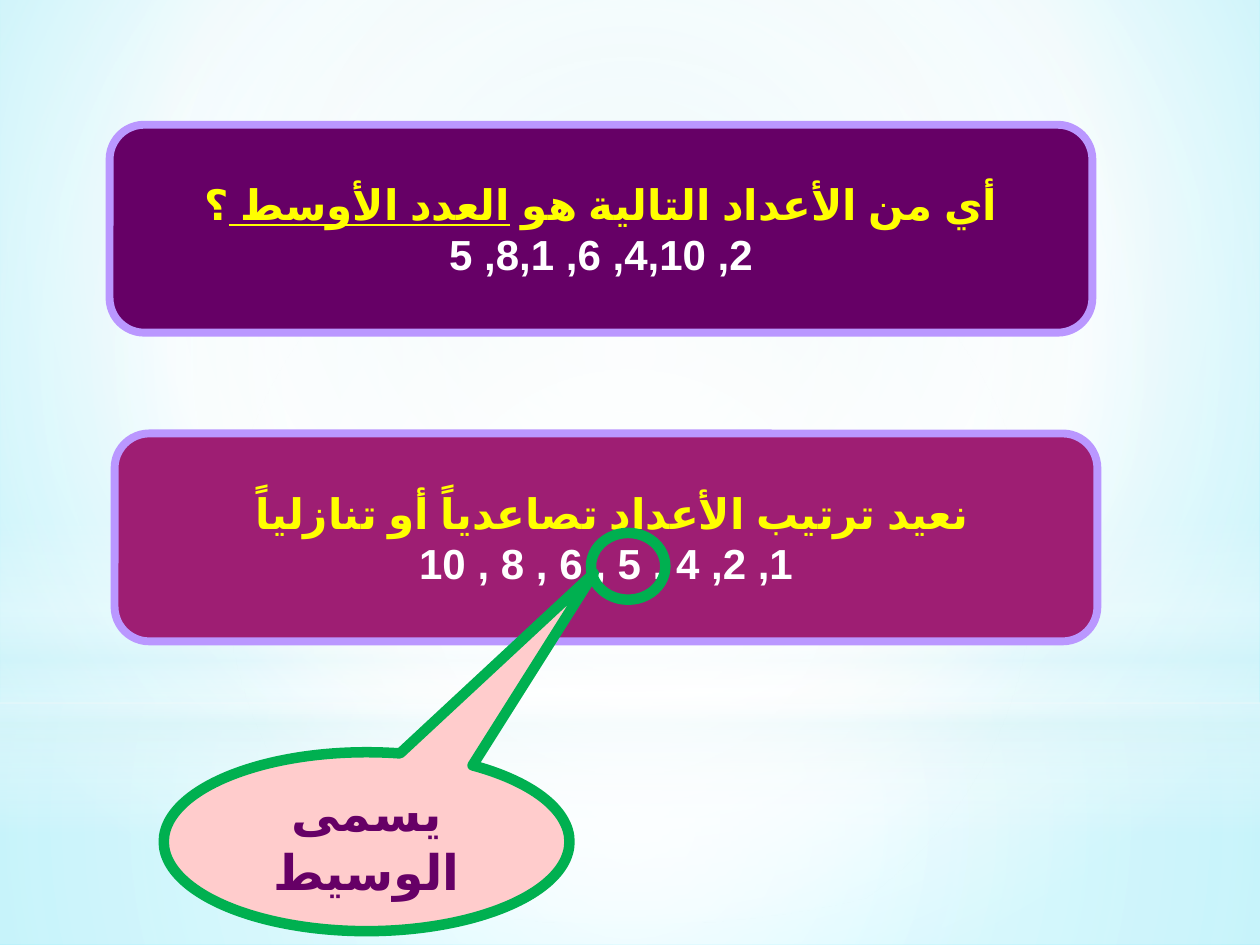
from lxml.etree import SubElement
from pptx import Presentation
from pptx.dml.color import RGBColor
from pptx.enum.shapes import MSO_SHAPE as Preset
from pptx.enum.text import MSO_ANCHOR as Anchor, PP_ALIGN as Align
from pptx.oxml.ns import qn
from pptx.util import Inches, Pt

COLORS = {
    "white": "FFFFFF", "ice": "DBF5F9", "sky": "CAF0F6", "cyan": "79EDFF",
    "purple": "660066", "magenta": "9E1E73", "lilac": "BA97FF",
    "yellow": "FFFF00", "green": "00B050", "pink": "FFCCCC",
}
LATIN_FONT, ARABIC_FONT = "Karla", "Arial"
CENTER = (50, 50, 50, 50)
GLOWS = [
    (Preset.RECTANGLE, (0, 5.58, 10, 1.92),
     [(0, "white", 91), (37, "white", 76), (100, "ice", 79)], CENTER),
    (Preset.RECTANGLE, (0, 0, 10, 5.58),
     [(0, "white", 89), (48, "white", 62), (100, "ice", 79)], CENTER),
    (Preset.RECTANGLE, (0, 4.12, 10, 2.5),
     [(0, "white", 0), (29, "white", 30), (45, "ice", 40),
      (55, "white", 26), (65, "ice", 60), (100, "white", 0)], None),
    (Preset.OVAL, (0, 1.75, 10, 5.58),
     [(0, "white", 100), (56, "white", 0)], CENTER),
]


def rgb(name):
    """Return the named palette colour."""
    return RGBColor.from_string(COLORS[name])


def set_gradient(fill, owner, stops, focus):
    """Give the owner a gradient: circular around focus, or vertical without one."""
    fill.gradient()
    gradient = owner.find(".//" + qn("a:gradFill"))
    gradient.clear()
    stop_list = SubElement(gradient, qn("a:gsLst"))
    for position, name, opacity in stops:
        stop = SubElement(stop_list, qn("a:gs"), {"pos": str(position * 1000)})
        color = SubElement(stop, qn("a:srgbClr"), {"val": COLORS[name]})
        if opacity < 100:
            SubElement(color, qn("a:alpha"), {"val": str(opacity * 1000)})
    if focus:
        circle = SubElement(gradient, qn("a:path"), {"path": "circle"})
        edges = {side: str(share * 1000) for side, share in zip("ltrb", focus)}
        SubElement(circle, qn("a:fillToRect"), edges)
    else:
        SubElement(gradient, qn("a:lin"), {"ang": "5400000", "scaled": "0"})


def add_outline(slide, preset, box, fill=None, line=None, width=0):
    """Add a preset shape in the box with flat fill and line."""
    outline = slide.shapes.add_shape(preset, *map(Inches, box))
    outline.shadow.inherit = False
    if fill:
        outline.fill.solid()
        outline.fill.fore_color.rgb = rgb(fill)
    else:
        outline.fill.background()
    if line:
        outline.line.color.rgb = rgb(line)
        outline.line.width = Pt(width)
    else:
        outline.line.fill.background()
    return outline


def write_lines(outline, lines, size):
    """Write centred right-to-left lines of (text, colour, underline) runs."""
    frame = outline.text_frame
    for name, value in {"word_wrap": True, "vertical_anchor": Anchor.MIDDLE}.items():
        setattr(frame, name, value)
    for index, pieces in enumerate(lines):
        paragraph = frame.add_paragraph() if index else frame.paragraphs[0]
        paragraph.alignment = Align.CENTER
        paragraph._p.get_or_add_pPr().set("rtl", "1")
        for text, color, underline in pieces:
            run = paragraph.add_run()
            run.text = text
            style = {"name": LATIN_FONT, "size": Pt(size), "bold": True,
                     "underline": underline}
            for name, value in style.items():
                setattr(run.font, name, value)
            run.font.color.rgb = rgb(color)
            properties = run._r.get_or_add_rPr()
            properties.set("lang", "ar-SA")
            SubElement(properties, qn("a:cs"), {"typeface": ARABIC_FONT})


def add_backdrop(slide):
    """Paint the background and the soft glows over it."""
    set_gradient(slide.background.fill, slide.element,
                 [(0, "sky", 100), (60, "white", 100), (100, "cyan", 100)],
                 (20, 10, 20, 60))
    for preset, box, stops, focus in GLOWS:
        glow = add_outline(slide, preset, box)
        set_gradient(glow.fill, glow._element, stops, focus)


def add_panel(slide, box, fill, heading, numbers):
    """Add a rounded panel with a heading above its numbers."""
    panel = add_outline(slide, Preset.ROUNDED_RECTANGLE, box, fill, "lilac", 4.5)
    write_lines(panel, [heading, [(numbers, "white", False)]], 24)


def add_median_callout(slide, ring_box, box):
    """Ring the median and name it in a callout."""
    add_outline(slide, Preset.OVAL, ring_box, None, "green", 6)
    callout = add_outline(slide, Preset.OVAL_CALLOUT, box, "pink", "green", 6)
    callout.adjustments[0], callout.adjustments[1] = 0.56, -1.5
    write_lines(callout, [[("يسمى الوسيط", "purple", False)]], 28)


def main():
    """Build the median slide."""
    deck = Presentation()
    deck.slide_width, deck.slide_height = Inches(10), Inches(7.5)
    slide = deck.slides.add_slide(deck.slide_layouts[6])
    add_backdrop(slide)
    question = [("أي من الأعداد التالية هو ", "yellow", False),
                ("العدد الأوسط ", "yellow", True), ("؟", "yellow", False)]
    ordering = [("نعيد ترتيب الأعداد تصاعدياً أو تنازلياً ", "yellow", False)]
    add_panel(slide, (0.87, 0.99, 7.8, 1.65), "purple", question,
              "2, 4,10, 6, 8,1, 5")
    add_panel(slide, (0.91, 3.44, 7.8, 1.65), "magenta", ordering,
              "1, 2, 4 , 5 , 6 , 8 , 10")
    add_median_callout(slide, (4.69, 4.23, 0.59, 0.53), (1.3, 5.97, 3.22, 1.42))
    deck.save("out.pptx")


if __name__ == "__main__":
    main()
